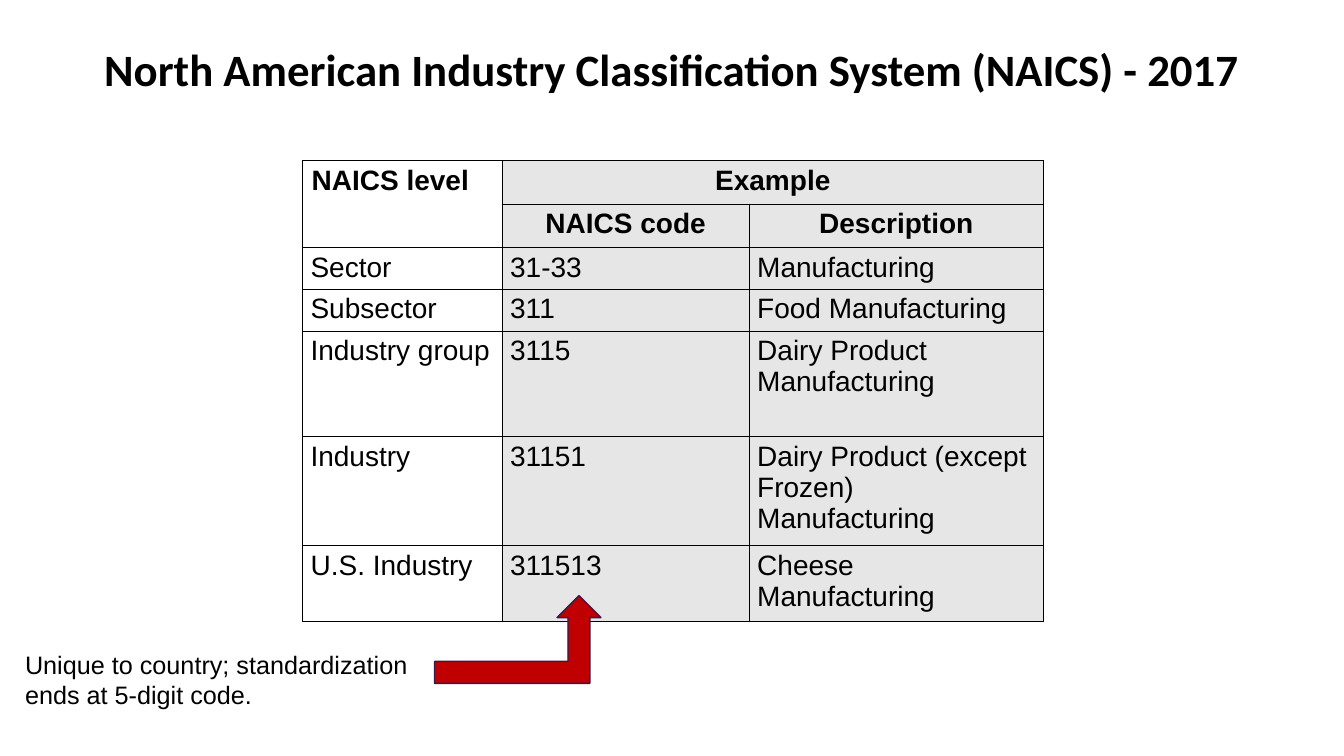
"""Build a slide that explains the NAICS levels with an example table."""
from dataclasses import dataclass

from lxml.etree import SubElement
from pptx import Presentation
from pptx.dml.color import RGBColor
from pptx.enum.shapes import MSO_SHAPE
from pptx.enum.text import MSO_ANCHOR, PP_ALIGN
from pptx.oxml.ns import qn
from pptx.util import Pt

LEFT, CENTER = PP_ALIGN.LEFT, PP_ALIGN.CENTER
TOP, MIDDLE = MSO_ANCHOR.TOP, MSO_ANCHOR.MIDDLE
BENT_ARROW = MSO_SHAPE.BENT_UP_ARROW
EMU_PER_PX = 9144
SLIDE_WIDTH, SLIDE_HEIGHT = 1333, 750

COLUMN_WIDTHS = [198, 245, 292]
ROW_HEIGHTS = [42, 41, 41, 41, 105, 105, 55]
HEADER_ROWS = 2
NAICS_ROWS = [
    ("NAICS level", "Example", ""),
    ("", "NAICS code", "Description"),
    ("Sector", "31-33", "Manufacturing"),
    ("Subsector", "311", "Food Manufacturing"),
    ("Industry group", "3115", "Dairy Product Manufacturing"),
    ("Industry", "31151", "Dairy Product (except Frozen) Manufacturing"),
    ("U.S. Industry", "311513", "Cheese Manufacturing"),
]
MERGES = [((0, 0), (1, 0)), ((0, 1), (0, 2))]


@dataclass(frozen=True)
class Theme:
    ink: str = "000000"
    paper: str = "FFFFFF"
    example_fill: str = "E7E6E6"
    arrow_fill: str = "C00000"
    arrow_line: str = "3C1846"
    heading_font: str = "Calibri"
    body_font: str = "Arial"
    title_size: int = 32
    table_size: int = 20
    note_size: int = 18
    border_width: float = 0.75


def px(length):
    return length * EMU_PER_PX


def write_text(frame, text, *, font, size, color, bold=False, align=LEFT, spacing=1.0):
    para = frame.paragraphs[0]
    para.alignment = align
    para.line_spacing = spacing
    span = para.add_run()
    span.text = text
    span.font.name = font
    span.font.size = Pt(size)
    span.font.bold = bold
    span.font.color.rgb = RGBColor.from_string(color)


class SlideBuilder:
    def __init__(self, deck, theme):
        self.theme = theme
        self.page = deck.slides.add_slide(deck.slide_layouts[6])

    def text(self, area, text, *, anchor=TOP, **style):
        box = self.page.shapes.add_textbox(*map(px, area))
        box.text_frame.word_wrap = True
        box.text_frame.vertical_anchor = anchor
        write_text(box.text_frame, text, color=self.theme.ink, **style)

    def arrow(self, area):
        arrow = self.page.shapes.add_shape(BENT_ARROW, *map(px, area))
        arrow.shadow.inherit = False
        arrow.fill.solid()
        arrow.fill.fore_color.rgb = RGBColor.from_string(self.theme.arrow_fill)
        arrow.line.color.rgb = RGBColor.from_string(self.theme.arrow_line)
        arrow.line.width = Pt(1)

    def border(self, cell):
        properties = cell._tc.get_or_add_tcPr()
        for side in ("a:lnL", "a:lnR", "a:lnT", "a:lnB"):
            line = SubElement(properties, qn(side), w=str(Pt(self.theme.border_width)))
            fill = SubElement(line, qn("a:solidFill"))
            SubElement(fill, qn("a:srgbClr"), val=self.theme.ink)

    def cell(self, cell, text, *, fill, inset, **style):
        cell.margin_left = cell.margin_right = px(inset)
        cell.margin_top = cell.margin_bottom = px(inset - 4)
        self.border(cell)
        cell.fill.solid()
        cell.fill.fore_color.rgb = RGBColor.from_string(fill)
        if text:
            write_text(cell.text_frame, text, font=self.theme.body_font,
                       size=self.theme.table_size, color=self.theme.ink, **style)

    def table(self, left, top):
        frame = self.page.shapes.add_table(
            len(ROW_HEIGHTS), len(COLUMN_WIDTHS), px(left), px(top),
            px(sum(COLUMN_WIDTHS)), px(sum(ROW_HEIGHTS)))
        table = frame.table
        table.first_row = table.horz_banding = False
        for column, width in zip(table.columns, COLUMN_WIDTHS):
            column.width = px(width)
        for row, height in zip(table.rows, ROW_HEIGHTS):
            row.height = px(height)
        for row_index, texts in enumerate(NAICS_ROWS):
            header = row_index < HEADER_ROWS
            for column_index, text in enumerate(texts):
                example = column_index > 0
                self.cell(
                    table.cell(row_index, column_index), text,
                    fill=self.theme.example_fill if example else self.theme.paper,
                    inset=9 if row_index == 0 else 8,
                    bold=header, align=CENTER if header and example else LEFT)
        for first, last in MERGES:
            table.cell(*first).merge(table.cell(*last))


def main():
    deck = Presentation()
    deck.slide_width, deck.slide_height = px(SLIDE_WIDTH), px(SLIDE_HEIGHT)
    theme = Theme()
    slide = SlideBuilder(deck, theme)
    slide.text((0, 17, SLIDE_WIDTH, 108),
               "North American Industry Classification System (NAICS) - 2017",
               anchor=MIDDLE, font=theme.heading_font, size=theme.title_size,
               bold=True, align=CENTER, spacing=0.9)
    slide.table(300, 159)
    slide.text((15, 639, 455, 71),
               "Unique to country; standardization ends at 5-digit code.",
               font=theme.body_font, size=theme.note_size)
    slide.arrow((431, 591, 165, 87))
    deck.save("out.pptx")


if __name__ == "__main__":
    main()
